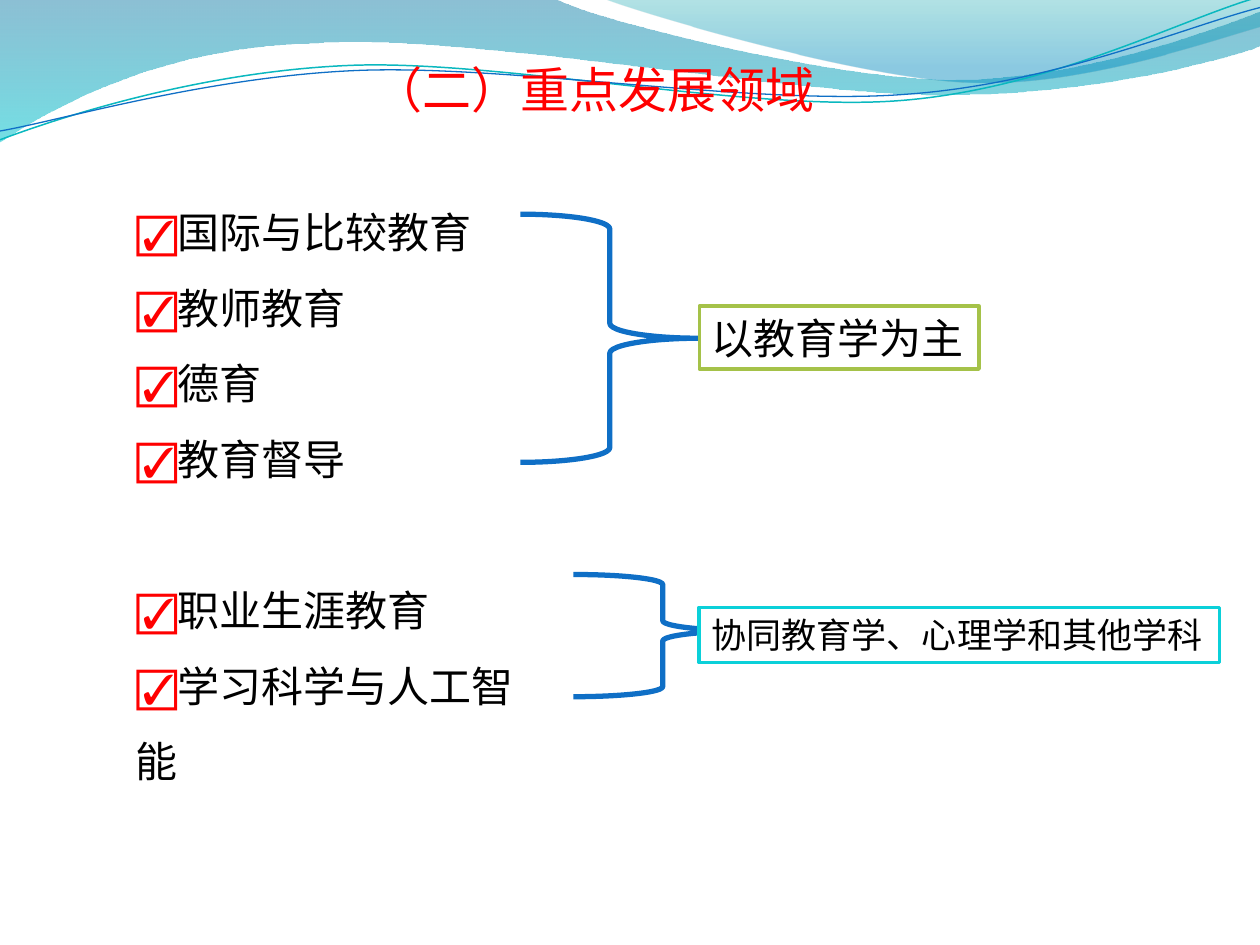
from dataclasses import dataclass

from lxml import etree
from pptx import Presentation
from pptx.dml.color import RGBColor
from pptx.enum.shapes import MSO_SHAPE
from pptx.enum.text import MSO_ANCHOR, MSO_AUTO_SIZE, PP_ALIGN
from pptx.oxml.ns import qn
from pptx.util import Inches, Pt

RECTANGLE = MSO_SHAPE.RECTANGLE
RIGHT_BRACE = MSO_SHAPE.RIGHT_BRACE
GROW = MSO_AUTO_SIZE.SHAPE_TO_FIT_TEXT
TOP = MSO_ANCHOR.TOP
LEFT = PP_ALIGN.LEFT
CJK_FONT = "Noto Sans CJK SC"
RED, BLACK, WHITE, BLUE = "FF0000", "000000", "FFFFFF", "0F6FC6"


@dataclass
class Stop:
    position: float
    color: str
    alpha: int


@dataclass
class Wave:
    """A start point, then segments of two numbers (line) or six (curve)."""
    start: tuple
    segments: list
    stops: tuple = ()
    line: str = ""
    width: float = 0


@dataclass
class Brace:
    left: float
    top: float
    height: float
    curl: float
    middle: float


@dataclass
class Label:
    top: float
    width: float
    height: float
    text: str
    size: int
    line: str


WAVES = [
    Wave((0, 0), [(4.4, -0.01), (4.76, 0.17, 6.64, 0.63, 7.58, 0.63),
                  (8.53, 0.63, 9.58, 0.26, 10, 0.09), (10.01, 0.36),
                  (9.83, 0.44, 8.7, 0.76, 7.46, 0.75),
                  (6.22, 0.75, 3.82, 0.28, 2.57, 0.34),
                  (1.29, 0.36, 0.46, 0.83, -0.01, 1.13)],
         (Stop(0, "0074A1", 45), Stop(1, "00C6CF", 55))),
    Wave((4.79, -0.01), [(5.09, 0.11, 6.82, 0.62, 7.69, 0.65),
                         (8.56, 0.69, 9.61, 0.32, 10, 0.21), (10, 0)],
         (Stop(0, "00A1A9", 30), Stop(0.8, "008BBF", 45))),
    Wave((0, 1.11), [(0.48, 0.93, 1.58, 0.57, 2.77, 0.52),
                     (3.95, 0.47, 5.93, 0.89, 7.13, 0.8),
                     (8.33, 0.71, 9.38, 0.15, 9.98, -0.02)],
         line="0AB8BF", width=0.85),
    Wave((0, 1.04), [(0.47, 0.96, 1.64, 0.61, 2.83, 0.56),
                     (4.03, 0.51, 5.97, 0.84, 7.17, 0.75),
                     (8.36, 0.67, 9.41, 0.21, 10, 0.06)],
         line=BLUE, width=0.75),
]
FIELD_GROUPS = [["国际与比较教育", "教师教育", "德育", "教育督导"],
                ["职业生涯教育", "学习科学与人工智能"]]
BRACES = [Brace(4.13, 1.7, 1.97, 0.083, 0.5), Brace(4.55, 4.56, 0.97, 0.083, 0.461)]
LABELS = [Label(2.43, 2.22, 0.5, "以教育学为主", 24, "A5C249"),
          Label(4.82, 4.13, 0.44, "协同教育学、心理学和其他学科", 20, "0BD0D9")]


def rgb(color: str) -> RGBColor:
    return RGBColor.from_string(color)


def set_line(shape, color: str, width: float) -> None:
    shape.line.color.rgb = rgb(color)
    shape.line.width = Pt(width)


def bend_segments(shape, wave: Wave) -> None:
    """Turn the straight segments that have control points into curves."""
    steps = shape.element.spPr.findall(".//" + qn("a:lnTo"))
    for step, segment in zip(steps, wave.segments):
        if len(segment) == 2:
            continue
        curve = etree.Element(qn("a:cubicBezTo"))
        for x, y in zip(segment[::2], segment[1::2]):
            etree.SubElement(curve, qn("a:pt"), x=str(Inches(x) - shape.left),
                             y=str(Inches(y) - shape.top))
        step.getparent().replace(step, curve)


def add_wave(page, wave: Wave) -> None:
    anchors = [(Inches(x), Inches(y))
               for x, y in [wave.start] + [segment[-2:] for segment in wave.segments]]
    builder = page.shapes.build_freeform(*anchors[0])
    builder.add_line_segments(anchors[1:], close=bool(wave.stops))
    shape = builder.convert_to_shape()
    bend_segments(shape, wave)
    shape.shadow.inherit = False
    if not wave.stops:
        shape.fill.background()
        set_line(shape, wave.line, wave.width)
        return
    shape.line.fill.background()
    shape.fill.gradient()
    shape.fill.gradient_angle = 270
    for target, stop in zip(shape.fill.gradient_stops, wave.stops):
        target.position = stop.position
        target.color.rgb = rgb(stop.color)
    colors = shape.element.spPr.findall(".//" + qn("a:gs") + "/" + qn("a:srgbClr"))
    for element, stop in zip(colors, wave.stops):
        etree.SubElement(element, qn("a:alpha"), val=str(stop.alpha * 1000))


def add_span(para, text: str, color: str) -> None:
    span = para.add_run()
    span.text = text
    span.font.color.rgb = rgb(color)
    etree.SubElement(span.font._element, qn("a:ea"), typeface=CJK_FONT)


def style_para(para, size: int, font: str = CJK_FONT) -> None:
    para.font.size = Pt(size)
    para.font.name = font
    para.alignment = LEFT


def fit_frame(shape):
    frame = shape.text_frame
    frame.word_wrap = False
    frame.auto_size = GROW
    frame.vertical_anchor = TOP
    return frame


def add_text_box(page, left: float, top: float, width: float, height: float):
    return fit_frame(page.shapes.add_textbox(Inches(left), Inches(top),
                                             Inches(width), Inches(height)))


def add_field_list(page) -> None:
    frame = add_text_box(page, 0.98, 1.39, 3.53, 4.34)
    para = frame.paragraphs[0]
    for group_index, group in enumerate(FIELD_GROUPS):
        for index, field in enumerate(group):
            if group_index or index:
                para = frame.add_paragraph()
            style_para(para, 24)
            para.line_spacing = 1.5
            if group_index and index == 0:
                para.space_before = Pt(43.2)
            add_span(para, "☑", RED)
            add_span(para, field, BLACK)


def add_brace(page, brace: Brace) -> None:
    shape = page.shapes.add_shape(RIGHT_BRACE, Inches(brace.left), Inches(brace.top),
                                  Inches(1.42), Inches(brace.height))
    shape.adjustments[0] = brace.curl
    shape.adjustments[1] = brace.middle
    shape.fill.background()
    set_line(shape, BLUE, 3)
    shape.shadow.inherit = False


def add_label(page, label: Label) -> None:
    shape = page.shapes.add_shape(RECTANGLE, Inches(5.55), Inches(label.top),
                                  Inches(label.width), Inches(label.height))
    shape.shadow.inherit = False
    shape.fill.solid()
    shape.fill.fore_color.rgb = rgb(WHITE)
    set_line(shape, label.line, 2)
    para = fit_frame(shape).paragraphs[0]
    style_para(para, label.size, "Cambria")
    add_span(para, label.text, BLACK)


def main() -> None:
    deck = Presentation()
    deck.slide_width, deck.slide_height = Inches(10), Inches(7.5)
    page = deck.slides.add_slide(deck.slide_layouts[6])

    # Wave decoration along the top
    for wave in WAVES:
        add_wave(page, wave)

    # Title
    title = add_text_box(page, 2.87, 0.42, 3.74, 0.57).paragraphs[0]
    style_para(title, 28)
    add_span(title, "（二）重点发展领域", RED)

    # Fields, and the braces that tie them to their disciplines
    add_field_list(page)
    for brace, label in zip(BRACES, LABELS):
        add_brace(page, brace)
        add_label(page, label)

    deck.save("out.pptx")


if __name__ == "__main__":
    main()
